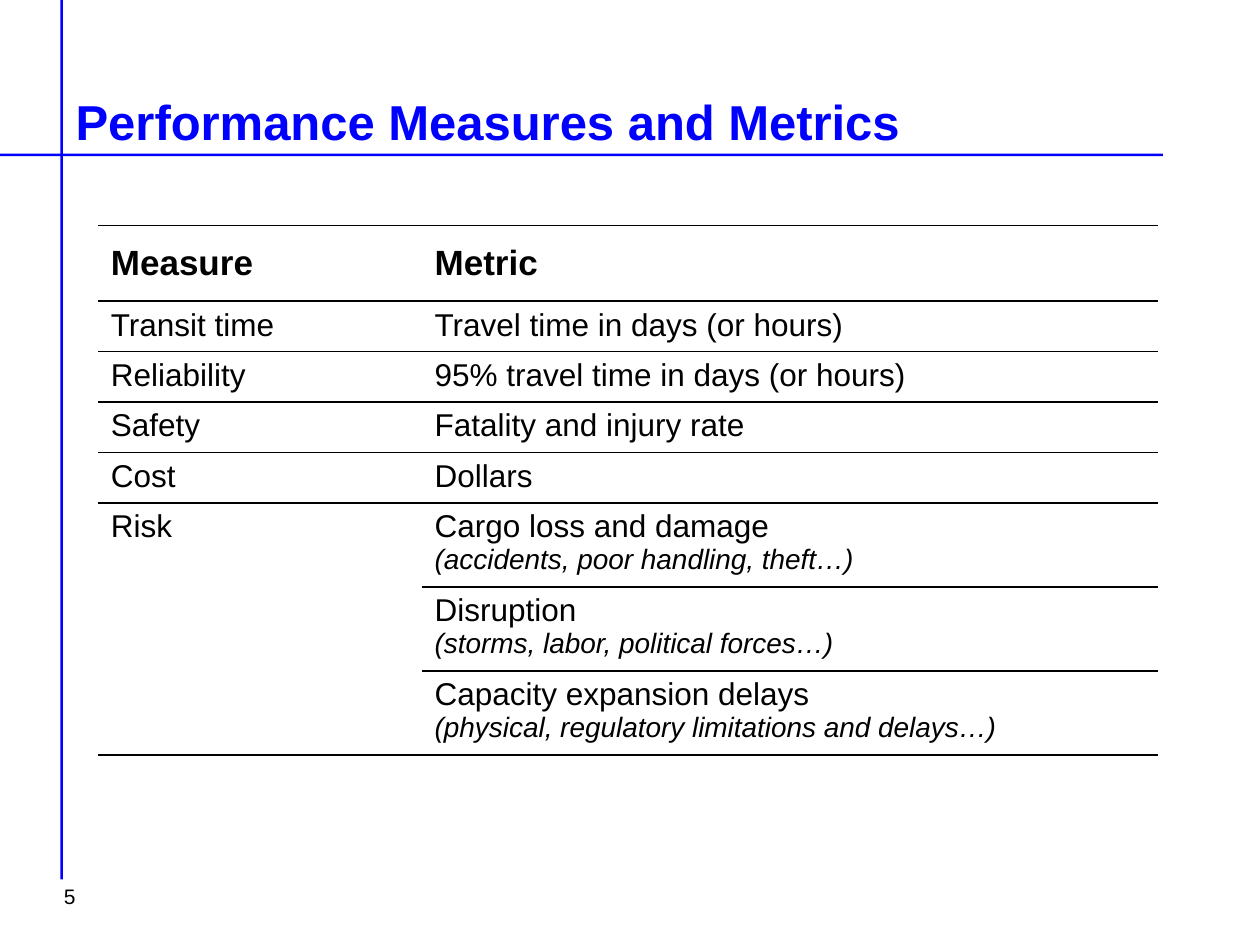
from dataclasses import dataclass

from lxml import etree
from pptx import Presentation
from pptx.dml.color import RGBColor
from pptx.enum.shapes import MSO_SHAPE
from pptx.enum.text import MSO_ANCHOR, MSO_AUTO_SIZE, PP_ALIGN
from pptx.oxml.ns import qn
from pptx.util import Inches, Pt

RECTANGLE = MSO_SHAPE.RECTANGLE
TOP, MIDDLE, BOTTOM = MSO_ANCHOR.TOP, MSO_ANCHOR.MIDDLE, MSO_ANCHOR.BOTTOM
NO_FIT = MSO_AUTO_SIZE.NONE
LEFT = PP_ALIGN.LEFT
TITLE_ONLY = 5


@dataclass(frozen=True)
class Theme:
    font: str = "Arial"
    accent: str = "0000FF"
    ink: str = "000000"
    title: int = 28
    header: int = 20
    body: int = 18
    detail: int = 16
    page_number: int = 12
    border: int = 1


THEME = Theme()

MEASURES = [
    ("Measure", "Metric", ""),
    ("Transit time", "Travel time in days (or hours)", ""),
    ("Reliability", "95% travel time in days (or hours)", ""),
    ("Safety", "Fatality and injury rate", ""),
    ("Cost", "Dollars", ""),
    ("Risk", "Cargo loss and damage", "(accidents, poor handling, theft…)"),
    ("", "Disruption", "(storms, labor, political forces…)"),
    ("", "Capacity expansion delays", "(physical, regulatory limitations and delays…)"),
]
COLUMN_WIDTHS = (2.57, 5.84)
HEADER_HEIGHT, LINE_HEIGHT, DETAIL_HEIGHT = 0.6, 0.38, 0.63


def add_text(para, text, size=THEME.body, color=THEME.ink, bold=False, italic=False):
    span = para.add_run()
    span.text = text
    span.font.name = THEME.font
    span.font.size = Pt(size)
    span.font.color.rgb = RGBColor.from_string(color)
    span.font.bold = bold
    span.font.italic = italic


def set_borders(cell, top, bottom):
    properties = cell._tc.get_or_add_tcPr()
    edges = {"a:lnL": False, "a:lnR": False, "a:lnT": top, "a:lnB": bottom}
    for index, (tag, visible) in enumerate(edges.items()):
        line = etree.Element(qn(tag), w=str(Pt(THEME.border)))
        if visible:
            fill = etree.SubElement(line, qn("a:solidFill"))
            etree.SubElement(fill, qn("a:srgbClr"), val=THEME.ink)
        else:
            etree.SubElement(line, qn("a:noFill"))
        properties.insert(index, line)


class SlideBuilder:
    def __init__(self, page, theme):
        self.page = page
        self.theme = theme

    def rule(self, left, top, width, height):
        bar = self.page.shapes.add_shape(
            RECTANGLE, Inches(left), Inches(top), Inches(width), Inches(height))
        bar.shadow.inherit = False
        bar.fill.solid()
        bar.fill.fore_color.rgb = RGBColor.from_string(self.theme.accent)
        bar.line.fill.background()

    def title(self, text):
        box = self.page.shapes.title
        box.left, box.top = Inches(0.5), Inches(0)
        box.width, box.height = Inches(9), Inches(1.24)
        frame = box.text_frame
        frame.auto_size = NO_FIT
        frame.vertical_anchor = BOTTOM
        para = frame.paragraphs[0]
        para.alignment = LEFT
        add_text(para, text, size=self.theme.title, color=self.theme.accent, bold=True)

    def page_number(self, text):
        box = self.page.shapes.add_textbox(
            Inches(0.41), Inches(6.91), Inches(0.73), Inches(0.4))
        box.text_frame.word_wrap = True
        box.text_frame.vertical_anchor = MIDDLE
        add_text(box.text_frame.paragraphs[0], text, size=self.theme.page_number)

    def measure_table(self, rows, left, top):
        heights = [HEADER_HEIGHT] + [
            DETAIL_HEIGHT if detail else LINE_HEIGHT for _, _, detail in rows[1:]]
        table = self.page.shapes.add_table(
            len(rows), len(COLUMN_WIDTHS), Inches(left), Inches(top),
            Inches(sum(COLUMN_WIDTHS)), Inches(sum(heights))).table
        table.horz_banding = False
        for column, width in zip(table.columns, COLUMN_WIDTHS):
            column.width = Inches(width)
        for index, (measure, metric, detail) in enumerate(rows):
            table.rows[index].height = Inches(heights[index])
            is_header = index == 0
            size = self.theme.header if is_header else self.theme.body
            for column, text in enumerate((measure, metric)):
                cell = table.cell(index, column)
                cell.fill.background()
                cell.vertical_anchor = MIDDLE if is_header else TOP
                para = cell.text_frame.paragraphs[0]
                if text:
                    add_text(para, text, size=size, bold=is_header)
                if column == 1 and detail:
                    para.add_line_break()
                    add_text(para, detail, size=self.theme.detail, italic=True)
                is_last = index == len(rows) - 1
                set_borders(cell, top=bool(text),
                            bottom=is_last or bool(rows[index + 1][column]))


def main():
    deck = Presentation()
    deck.slide_width, deck.slide_height = Inches(10), Inches(7.5)
    page = deck.slides.add_slide(deck.slide_layouts[TITLE_ONLY])
    builder = SlideBuilder(page, THEME)
    builder.rule(0, 1.22, 9.23, 0.02)
    builder.rule(0.48, 0, 0.02, 6.98)
    builder.title("Performance Measures and Metrics")
    builder.page_number("5")
    builder.measure_table(MEASURES, 0.78, 1.79)
    deck.save("out.pptx")


if __name__ == "__main__":
    main()
